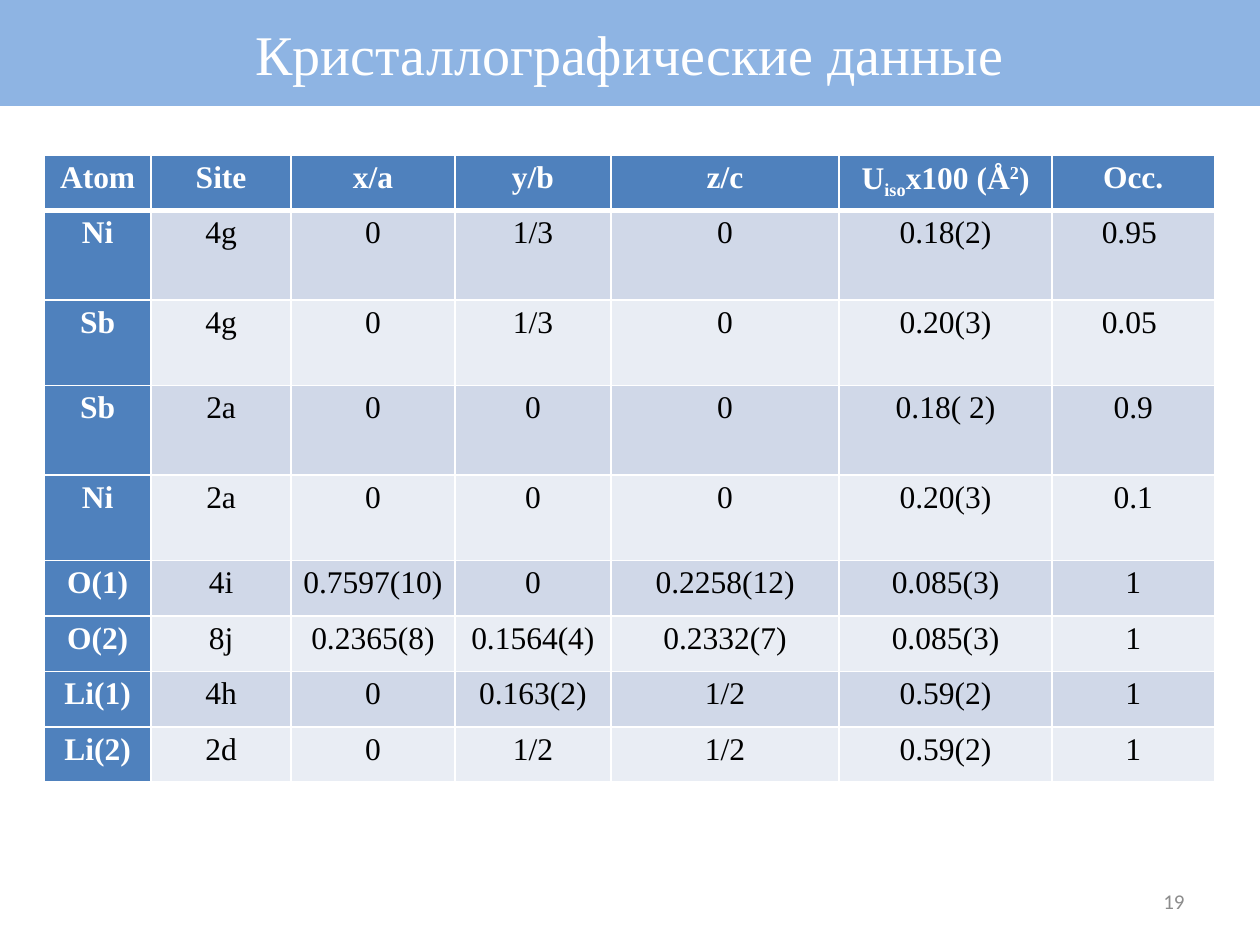
import pptx
import pptx.util
import pptx.dml.color
import pptx.enum.shapes
import pptx.enum.text
import pptx.oxml
import pptx.oxml.ns

Inches = pptx.util.Inches
COLORS = {
    "banner": "8EB4E3",
    "head": "4F81BD",
    "band_dark": "D0D8E8",
    "band_light": "E9EDF4",
    "white": "FFFFFF",
    "black": "000000",
    "number": "8C8C8C",
}


def add_run(p, text, size, font, color, bold=False, baseline=0):
    r = p.add_run()
    r.text = text
    r.font.size = pptx.util.Pt(size)
    r.font.name = font
    r.font.bold = bold
    r.font.color.rgb = pptx.dml.color.RGBColor.from_string(COLORS[color])
    if baseline:
        r._r.get_or_add_rPr().set("baseline", str(baseline * 1000))


def add_border(cell, side, width):
    cell._tc.get_or_add_tcPr().append(pptx.oxml.parse_xml(
        f'<a:ln{side} {pptx.oxml.ns.nsdecls("a")} w="{pptx.util.Pt(width)}">'
        f'<a:solidFill><a:srgbClr val="{COLORS["white"]}"/></a:solidFill></a:ln{side}>'
    ))


prs = pptx.Presentation()
prs.slide_width = Inches(10)
prs.slide_height = Inches(7.5)
s = prs.slides.add_slide(prs.slide_layouts[6])

rows = [
    ["Atom", "Site", "x/a", "y/b", "z/c",
     [("U", 0), ("iso", -25), ("x100 (Å", 0), ("2", 30), (")", 0)], "Occ."],
    ["Ni", "4g", "0", "1/3", "0", "0.18(2)", "0.95 "],
    ["Sb", "4g", "0", "1/3", "0", "0.20(3)", "0.05 "],
    ["Sb", "2a", "0", "0", "0", "0.18( 2)", "0.9"],
    ["Ni", "2a", "0", "0", "0", "0.20(3)", "0.1"],
    ["O(1)", "4i", "0.7597(10)", "0", "0.2258(12)", "0.085(3)", "1"],
    ["O(2)", "8j", "0.2365(8)", "0.1564(4)", "0.2332(7)", "0.085(3)", "1"],
    ["Li(1)", "4h", "0", "0.163(2)", "1/2", "0.59(2)", "1"],
    ["Li(2)", "2d", "0", "1/2", "1/2", "0.59(2)", "1"],
]
widths = [0.85, 1.11, 1.3, 1.24, 1.81, 1.69, 1.29]
heights = [0.44, 0.71, 0.68, 0.71, 0.68, 0.44, 0.44, 0.44, 0.44]

table = s.shapes.add_table(
    len(rows), len(widths), Inches(0.35), Inches(1.23),
    Inches(sum(widths)), Inches(sum(heights))).table
table.first_col = True
for col, width in zip(table.columns, widths):
    col.width = Inches(width)
for row, height in zip(table.rows, heights):
    row.height = Inches(height)

for i, values in enumerate(rows):
    for j, value in enumerate(values):
        cell = table.cell(i, j)
        cell.margin_left = cell.margin_right = Inches(0.07)
        cell.margin_top = cell.margin_bottom = 0
        for side in "LRTB":
            thick = (i == 0 and side == "B") or (i == 1 and side == "T")
            add_border(cell, side, 3 if thick else 1)
        head = i == 0 or j == 0
        fill = "head" if head else "band_dark" if i % 2 else "band_light"
        cell.fill.solid()
        cell.fill.fore_color.rgb = pptx.dml.color.RGBColor.from_string(COLORS[fill])
        p = cell.text_frame.paragraphs[0]
        p.alignment = pptx.enum.text.PP_ALIGN.CENTER
        p.line_spacing = 1.15
        parts = [(value, 0)] if isinstance(value, str) else value
        for text, baseline in parts:
            add_run(p, text, 18, "Times New Roman",
                    "white" if head else "black", head, baseline)

sp = s.shapes.add_shape(
    pptx.enum.shapes.MSO_SHAPE.RECTANGLE, 0, 0, Inches(10), Inches(0.84))
sp.shadow.inherit = False
sp.fill.solid()
sp.fill.fore_color.rgb = pptx.dml.color.RGBColor.from_string(COLORS["banner"])
sp.line.fill.background()
tf = sp.text_frame
tf.word_wrap = True
tf.vertical_anchor = pptx.enum.text.MSO_ANCHOR.MIDDLE
p = tf.paragraphs[0]
p.alignment = pptx.enum.text.PP_ALIGN.CENTER
add_run(p, "Кристаллографические данные", 32, "Times New Roman", "white")

sp = s.shapes.add_textbox(Inches(7.17), Inches(6.95), Inches(2.33), Inches(0.4))
tf = sp.text_frame
tf.word_wrap = True
tf.vertical_anchor = pptx.enum.text.MSO_ANCHOR.MIDDLE
p = tf.paragraphs[0]
p.alignment = pptx.enum.text.PP_ALIGN.RIGHT
add_run(p, "19", 12, "Calibri", "number")

prs.save("out.pptx")
